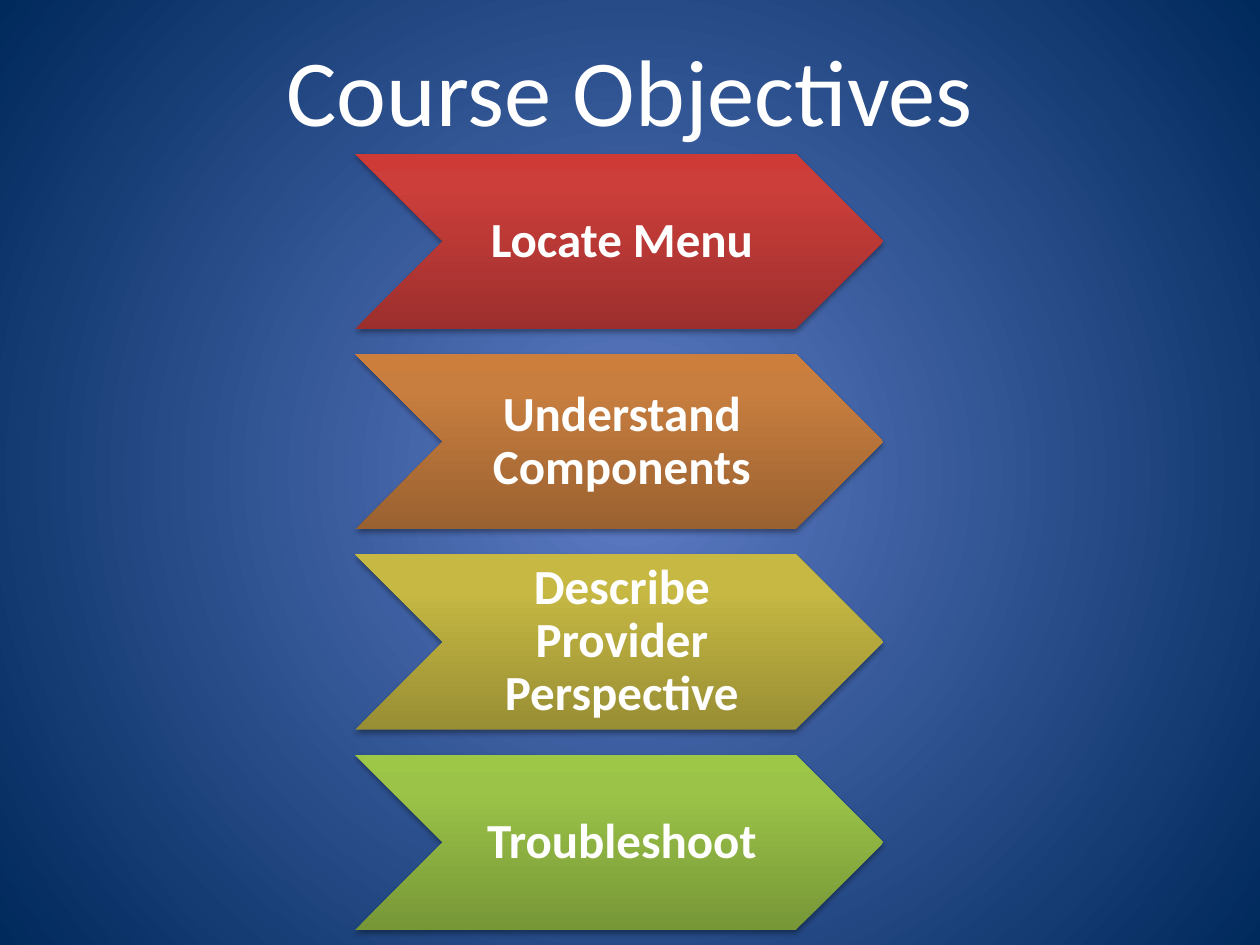
from dataclasses import dataclass

import lxml.etree
import pptx
import pptx.dml.color
import pptx.enum.shapes
import pptx.enum.text
import pptx.oxml
import pptx.oxml.ns
import pptx.util

SLIDE_WIDTH = 10
SLIDE_HEIGHT = 7.5
FONT = "Calibri"
COLOURS = {
    "text": "FFFFFF",
    "shadow": "000000",
    "background": ("5E7CC5", "00295C"),
    "red": ("9C2F2D", "CB3E3A", "CE3B37"),
    "orange": ("9A6130", "C87E3F", "CC7E3C"),
    "yellow": ("988E34", "C6B843", "C9BB41"),
    "green": ("779737", "9BC348", "9DC746"),
}
RADIAL = (
    '<a:path path="circle">'
    '<a:fillToRect l="50000" t="50000" r="50000" b="50000"/></a:path>'
)
UPWARD = '<a:lin ang="16200000" scaled="0"/>'


@dataclass(frozen=True)
class Box:
    left: float
    top: float
    width: float
    height: float

    def lengths(self) -> list[int]:
        return [
            pptx.util.Inches(value)
            for value in (self.left, self.top, self.width, self.height)
        ]


@dataclass(frozen=True)
class Objective:
    text: str
    colour: str


TITLE = Box(0.05 * SLIDE_WIDTH, 0.08, 0.9 * SLIDE_WIDTH, SLIDE_HEIGHT / 6)
FIRST_CHEVRON = Box(2.82, 1.22, 4.19, 1.39)
ROW_STEP = 1.59
OBJECTIVES = (
    Objective("Locate Menu", "red"),
    Objective("Understand Components", "orange"),
    Objective("Describe Provider Perspective", "yellow"),
    Objective("Troubleshoot", "green"),
)


def apply_gradient(
    fill: pptx.dml.fill.FillFormat,
    parent: lxml.etree.ElementBase,
    colours: tuple[str, ...],
    positions: tuple[int, ...],
    shading: str,
) -> None:
    fill.solid()
    stops = "".join(
        f'<a:gs pos="{position * 1000}"><a:srgbClr val="{colour}"/></a:gs>'
        for position, colour in zip(positions, colours)
    )
    gradient = pptx.oxml.parse_xml(
        f'<a:gradFill {pptx.oxml.ns.nsdecls("a")} rotWithShape="1">'
        f"<a:gsLst>{stops}</a:gsLst>{shading}</a:gradFill>"
    )
    solid = parent.find(pptx.oxml.ns.qn("a:solidFill"))
    parent.replace(solid, gradient)


def apply_shadow(shape: pptx.shapes.autoshape.Shape) -> None:
    shape.shadow.inherit = False
    effects = shape.element.spPr.find(pptx.oxml.ns.qn("a:effectLst"))
    blur, distance = pptx.util.Pt(3.1), pptx.util.Pt(1.8)
    effects.append(
        pptx.oxml.parse_xml(
            f'<a:outerShdw {pptx.oxml.ns.nsdecls("a")} blurRad="{blur}" '
            f'dist="{distance}" dir="5400000" rotWithShape="0">'
            f'<a:srgbClr val="{COLOURS["shadow"]}"><a:alpha val="35000"/>'
            "</a:srgbClr></a:outerShdw>"
        )
    )


def add_label(
    shapes: pptx.shapes.shapetree.GroupShapes,
    box: Box,
    text: str,
    size: int,
    bold: bool = False,
) -> pptx.shapes.autoshape.Shape:
    label = shapes.add_textbox(*box.lengths())
    frame = label.text_frame
    frame.word_wrap = True
    frame.vertical_anchor = pptx.enum.text.MSO_ANCHOR.MIDDLE
    paragraph = frame.paragraphs[0]
    paragraph.alignment = pptx.enum.text.PP_ALIGN.CENTER
    run = paragraph.add_run()
    run.text = text
    run.font.name = FONT
    run.font.size = pptx.util.Pt(size)
    run.font.bold = bold
    run.font.color.rgb = pptx.dml.color.RGBColor.from_string(COLOURS["text"])
    return label


def add_objective(
    shapes: pptx.shapes.shapetree.GroupShapes, objective: Objective, row: int
) -> None:
    first = FIRST_CHEVRON
    box = Box(first.left, first.top + row * ROW_STEP, first.width, first.height)
    chevron = shapes.add_shape(
        pptx.enum.shapes.MSO_SHAPE.CHEVRON, *box.lengths()
    )
    apply_gradient(
        chevron.fill,
        chevron.element.spPr,
        COLOURS[objective.colour],
        (0, 80, 100),
        UPWARD,
    )
    chevron.line.fill.background()
    apply_shadow(chevron)

    notch = box.height / 2
    text_box = Box(box.left + notch, box.top, box.width - 2 * notch, box.height)
    label = add_label(shapes, text_box, objective.text, 28, bold=True)
    frame = label.text_frame
    frame.margin_left = pptx.util.Inches(0.04)
    frame.margin_right = 0
    frame.margin_top = frame.margin_bottom = pptx.util.Inches(0.02)
    frame.paragraphs[0].line_spacing = 0.9


def main() -> None:
    presentation = pptx.Presentation()
    presentation.slide_width = pptx.util.Inches(SLIDE_WIDTH)
    presentation.slide_height = pptx.util.Inches(SLIDE_HEIGHT)
    slide = presentation.slides.add_slide(presentation.slide_layouts[6])
    background_fill = slide.background.fill
    background_fill.solid()
    apply_gradient(
        background_fill,
        slide.element.find(".//" + pptx.oxml.ns.qn("p:bgPr")),
        COLOURS["background"],
        (0, 100),
        RADIAL,
    )
    group = slide.shapes.add_group_shape()
    for row, objective in enumerate(OBJECTIVES):
        add_objective(group.shapes, objective, row)
    add_label(slide.shapes, TITLE, "Course Objectives", 54)
    presentation.save("out.pptx")


if __name__ == "__main__":
    main()
